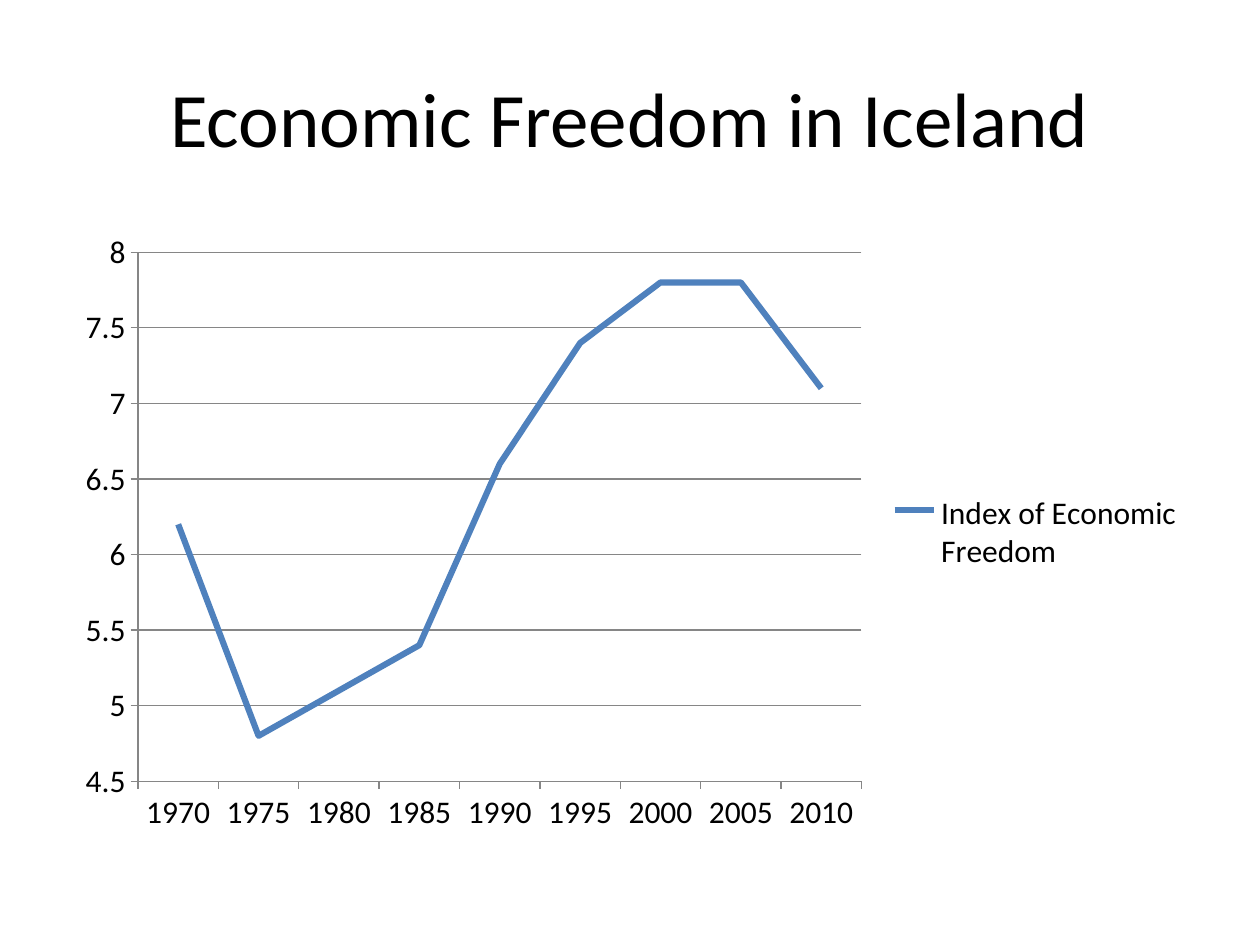
from pptx import Presentation
from pptx.chart.data import CategoryChartData
from pptx.dml.color import RGBColor
from pptx.enum.chart import XL_CHART_TYPE, XL_LEGEND_POSITION, XL_MARKER_STYLE, XL_TICK_MARK
from pptx.enum.text import MSO_ANCHOR, PP_ALIGN
from pptx.util import Cm, Pt

COLORS = {"text": "000000", "index": "4F81BD", "axis": "868686"}
FONT = "Calibri"
FREEDOM_INDEX = [6.2, 4.8, 5.1, 5.4, 6.6, 7.4, 7.8, 7.8, 7.1]
YEARS = [str(year) for year in range(1970, 2011, 5)]


class SlideBuilder:
    def __init__(self, deck):
        self.slide = deck.slides.add_slide(deck.slide_layouts[5])

    def style_font(self, font, size):
        font.name = FONT
        font.size = Pt(size)
        font.color.rgb = RGBColor.from_string(COLORS["text"])

    def style_line(self, line, color, width):
        line.color.rgb = RGBColor.from_string(COLORS[color])
        line.width = Pt(width)

    def title(self, wording, left, top, width, height):
        heading = self.slide.shapes.title
        heading.left, heading.top = Cm(left), Cm(top)
        heading.width, heading.height = Cm(width), Cm(height)
        frame = heading.text_frame
        frame.text = wording
        frame.vertical_anchor = MSO_ANCHOR.MIDDLE
        paragraph = frame.paragraphs[0]
        paragraph.alignment = PP_ALIGN.CENTER
        self.style_font(paragraph.font, 44)

    def line_chart(self, name, categories, values, left, top, width, height):
        data = CategoryChartData()
        data.categories = categories
        data.add_series(name, values)
        chart = self.slide.shapes.add_chart(
            XL_CHART_TYPE.LINE, Cm(left), Cm(top), Cm(width), Cm(height), data
        ).chart
        self.style_font(chart.font, 18)
        chart.has_title = False
        chart.has_legend = True
        chart.legend.position = XL_LEGEND_POSITION.RIGHT
        chart.legend.include_in_layout = False

        plot = chart.plots[0]
        plot.vary_by_categories = False
        series = plot.series[0]
        series.smooth = False
        series.marker.style = XL_MARKER_STYLE.NONE
        self.style_line(series.format.line, "index", 3.5)

        for axis in (chart.category_axis, chart.value_axis):
            axis.major_tick_mark = XL_TICK_MARK.OUTSIDE
            axis.minor_tick_mark = XL_TICK_MARK.NONE
            self.style_line(axis.format.line, "axis", 0.75)
        scale = chart.value_axis
        scale.minimum_scale, scale.maximum_scale = 4.5, 8
        scale.major_unit = 0.5
        scale.has_major_gridlines = True
        self.style_line(scale.major_gridlines.format.line, "axis", 0.75)
        scale.tick_labels.number_format = "General"
        scale.tick_labels.number_format_is_linked = False


def main():
    deck = Presentation()
    deck.slide_width, deck.slide_height = Cm(25.4), Cm(19.05)
    builder = SlideBuilder(deck)
    builder.title("Economic Freedom in Iceland", 1.27, 0.76, 22.86, 3.18)
    builder.line_chart("Index of Economic Freedom", YEARS, FREEDOM_INDEX,
                       1.27, 4.45, 22.86, 12.57)
    deck.save("out.pptx")


if __name__ == "__main__":
    main()
